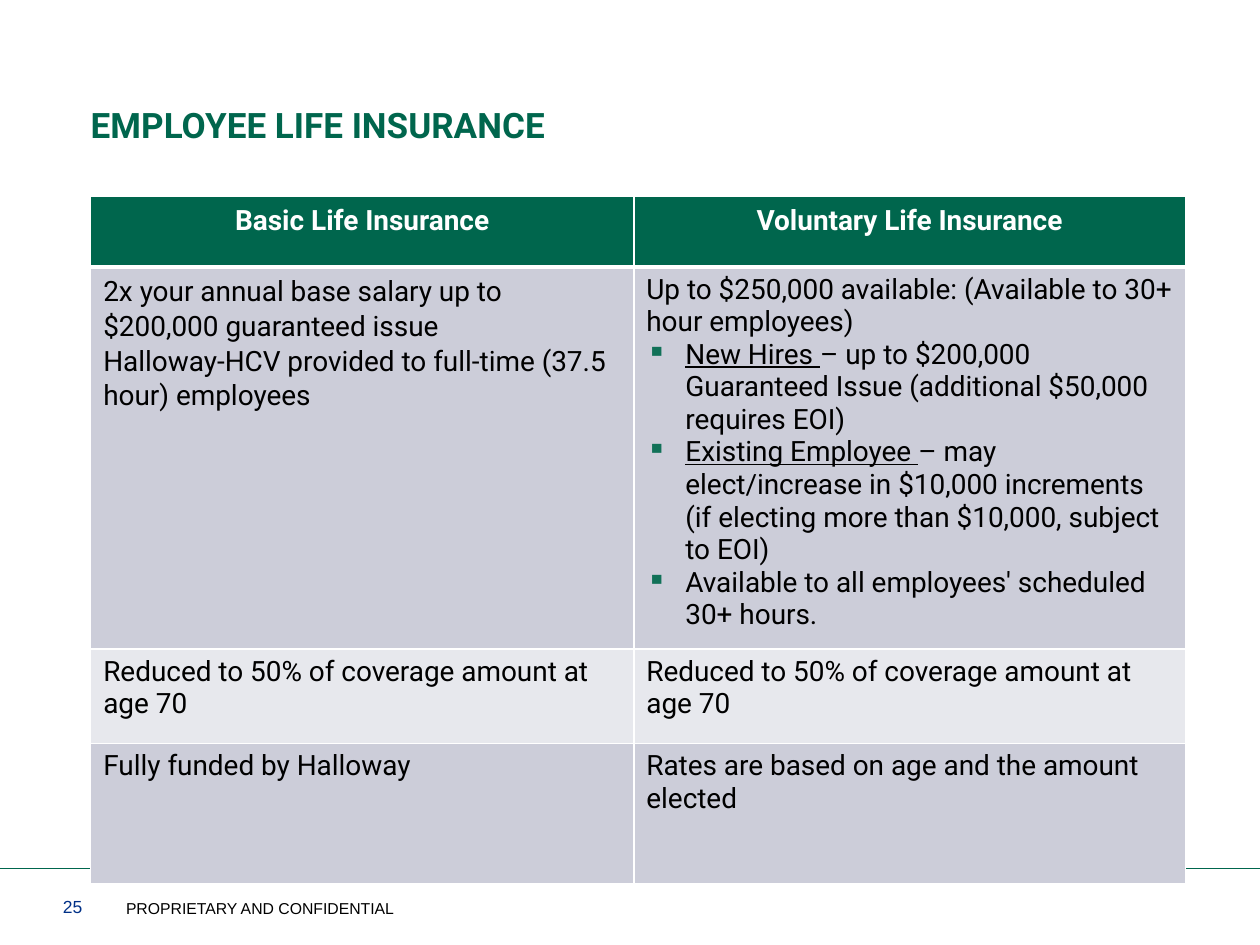
from dataclasses import dataclass

from lxml.etree import SubElement
from pptx import Presentation
from pptx.dml.color import RGBColor
from pptx.enum.shapes import MSO_CONNECTOR
from pptx.enum.text import MSO_ANCHOR, PP_ALIGN
from pptx.oxml.ns import qn
from pptx.util import Inches, Pt


@dataclass(frozen=True)
class Theme:
    green: str = "00664D"
    bullet: str = "117158"
    navy: str = "003087"
    black: str = "000000"
    white: str = "FFFFFF"
    band_dark: str = "CCCDD9"
    band_light: str = "E7E8ED"
    heading_font: str = "Roboto"
    footer_font: str = "Arial"
    title_size: int = 20
    table_size: int = 16
    number_size: int = 10
    footer_size: int = 9


THEME = Theme()
TITLE = {"name": THEME.heading_font, "size": Pt(THEME.title_size), "bold": True}
HEADER = {"name": THEME.heading_font, "size": Pt(THEME.table_size), "bold": True}
BODY = {"name": THEME.heading_font, "size": Pt(THEME.table_size), "bold": False}
UNDERLINED = {**BODY, "underline": True}
NUMBER = {"name": THEME.footer_font, "size": Pt(THEME.number_size)}
FOOTER = {"name": THEME.footer_font, "size": Pt(THEME.footer_size)}

COLUMNS = [4.31, 4.38]
ROWS = [0.56, 2.5, 0.75, 1.11]
REDUCTION = "Reduced to 50% of coverage amount at age 70"

# Each cell is a list of paragraphs; a tuple is a bullet of (underlined lead, rest)
CELLS = [
    [["Basic Life Insurance"], ["Voluntary Life Insurance"]],
    [
        ["2x your annual base salary up to $200,000 guaranteed issue",
         "Halloway-HCV provided to full-time (37.5 hour) employees"],
        ["Up to $250,000 available: (Available to 30+ hour employees)",
         ("New Hires ", "– up to $200,000 Guaranteed Issue "
          "(additional $50,000 requires EOI)"),
         ("Existing Employee ", "– may elect/increase in $10,000 increments "
          "(if electing more than $10,000, subject to EOI)"),
         ("", "Available to all employees' scheduled 30+ hours.")],
    ],
    [[REDUCTION], [REDUCTION]],
    [["Fully funded by Halloway"], ["Rates are based on age and the amount elected"]],
]


def rgb(color):
    return RGBColor.from_string(color)


def add_run(p, text, style, color):
    r = p.add_run()
    r.text = text
    for key, value in style.items():
        setattr(r.font, key, value)
    r.font.color.rgb = rgb(color)


def add_text(s, box, text, style, color, anchor):
    tf = s.shapes.add_textbox(*map(Inches, box)).text_frame
    settings = {"word_wrap": True, "vertical_anchor": anchor,
                "margin_left": 0, "margin_right": 0}
    for key, value in settings.items():
        setattr(tf, key, value)
    add_run(tf.paragraphs[0], text, style, color)


def add_rule(s, y, width):
    line = s.shapes.add_connector(
        MSO_CONNECTOR.STRAIGHT, 0, Inches(y), Inches(width), Inches(y))
    line.line.color.rgb = rgb(THEME.green)
    line.line.width = Pt(0.5)
    SubElement(line._element.spPr, qn("a:effectLst"))


def add_bullet(p):
    pPr = p._p.get_or_add_pPr()
    indent = Inches(0.31)
    pPr.set("marL", str(indent))
    pPr.set("indent", str(-indent))
    color = SubElement(pPr, qn("a:buClr"))
    SubElement(color, qn("a:srgbClr"), val=THEME.bullet)
    SubElement(pPr, qn("a:buChar"), char="▪")


def set_borders(cell, widths):
    tcPr = cell._tc.get_or_add_tcPr()
    for side, width in widths.items():
        ln = SubElement(tcPr, qn(f"a:ln{side}"), w=str(Pt(width)))
        fill = SubElement(ln, qn("a:solidFill"))
        SubElement(fill, qn("a:srgbClr"), val=THEME.white)


def fill_paragraph(p, content, style, color):
    if isinstance(content, tuple):
        lead, rest = content
        add_bullet(p)
        if lead:
            add_run(p, lead, UNDERLINED, color)
        add_run(p, rest, style, color)
    else:
        add_run(p, content, style, color)


def fill_cell(cell, paragraphs, row, column):
    header = row == 0
    # The header keeps a heavier rule, shared with the row below it
    set_borders(cell, {"L": 1, "R": 1, "T": 3 if row == 1 else 1,
                       "B": 3 if header else 1})
    band = THEME.band_dark if row % 2 else THEME.band_light
    cell.fill.solid()
    cell.fill.fore_color.rgb = rgb(THEME.green if header else band)
    tf = cell.text_frame
    for i, content in enumerate(paragraphs):
        p = tf.add_paragraph() if i else tf.paragraphs[0]
        if header:
            p.alignment = PP_ALIGN.CENTER
        if header or (row, column) == (1, 0):
            p.line_spacing = 1.07
        fill_paragraph(p, content, HEADER if header else BODY,
                       THEME.white if header else THEME.black)


def add_benefits_table(s, left, top):
    table = s.shapes.add_table(
        len(ROWS), len(COLUMNS), Inches(left), Inches(top),
        Inches(sum(COLUMNS)), Inches(sum(ROWS))).table
    for column, width in zip(table.columns, COLUMNS):
        column.width = Inches(width)
    for row, height in zip(table.rows, ROWS):
        row.height = Inches(height)
    for i, row in enumerate(CELLS):
        for j, paragraphs in enumerate(row):
            fill_cell(table.cell(i, j), paragraphs, i, j)


def main():
    prs = Presentation()
    prs.slide_width, prs.slide_height = Inches(10), Inches(7.5)
    s = prs.slides.add_slide(prs.slide_layouts[6])

    # Footer
    add_rule(s, 6.89, 10)
    add_text(s, (0.5, 7.08, 0.54, 0.25), "25", NUMBER, THEME.navy,
             MSO_ANCHOR.BOTTOM)
    add_text(s, (1, 7.08, 2.35, 0.25), "PROPRIETARY AND CONFIDENTIAL", FOOTER,
             THEME.black, MSO_ANCHOR.BOTTOM)

    # Title and comparison table
    add_text(s, (0.72, 0.77, 8.92, 1.08), "EMPLOYEE LIFE INSURANCE", TITLE,
             THEME.green, MSO_ANCHOR.TOP)
    add_benefits_table(s, 0.72, 1.56)

    prs.save("out.pptx")


if __name__ == "__main__":
    main()
